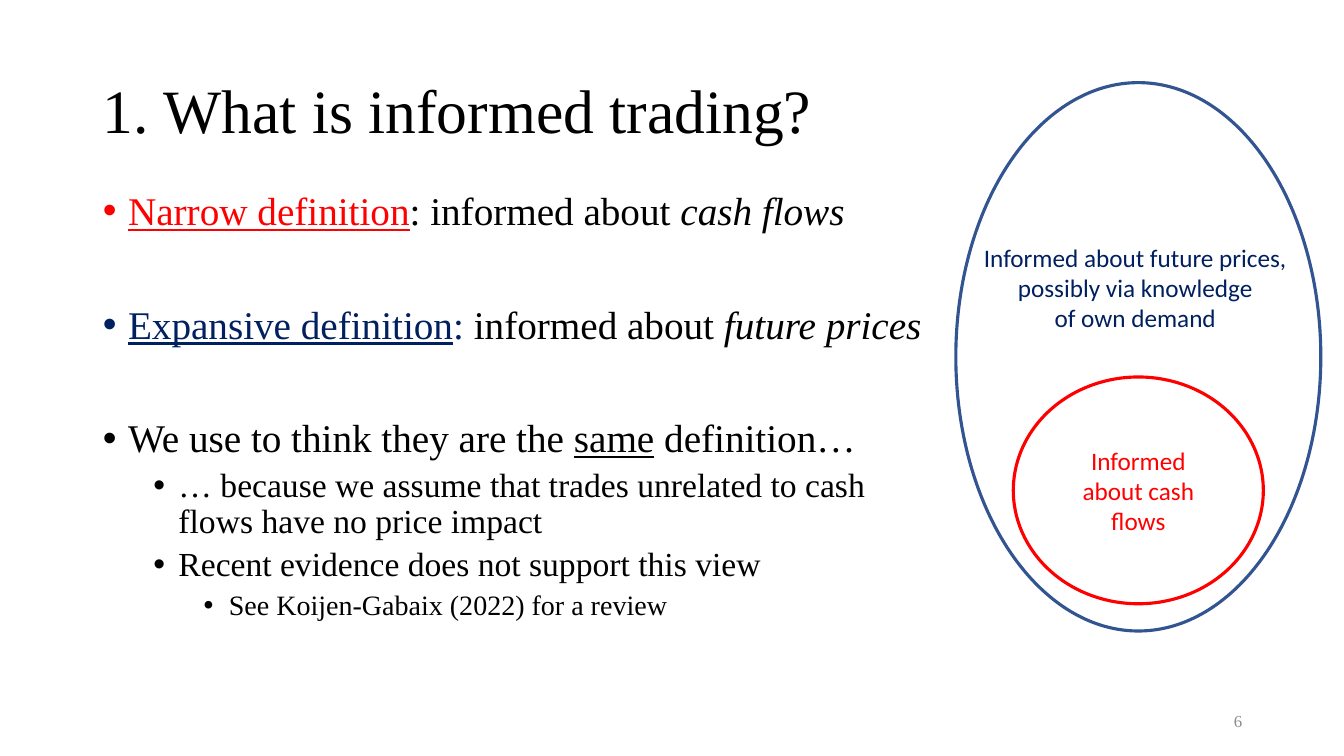
from lxml import etree
from pptx import Presentation
from pptx.dml.color import RGBColor
from pptx.enum.shapes import MSO_SHAPE
from pptx.enum.text import MSO_ANCHOR, MSO_AUTO_SIZE, PP_ALIGN
from pptx.oxml.ns import qn
from pptx.util import Inches, Pt

OVAL = MSO_SHAPE.OVAL
MIDDLE, TOP = MSO_ANCHOR.MIDDLE, MSO_ANCHOR.TOP
NO_AUTOFIT = MSO_AUTO_SIZE.NONE
LEFT, CENTER, RIGHT = PP_ALIGN.LEFT, PP_ALIGN.CENTER, PP_ALIGN.RIGHT

SERIF, SANS = "Times New Roman", "Calibri"
BLACK, RED, NAVY, BLUE, GRAY = "000000", "FF0000", "002060", "325491", "8C8C8C"

LEVEL_SIZES = (28, 24, 20)
SECTION_GAP = 51
DEFINITIONS = [
    (0, 10, [("Narrow definition", {"color": RED, "underline": True}),
             (": informed about ", {}),
             ("cash flows", {"italic": True})]),
    (0, SECTION_GAP, [("Expansive definition", {"color": NAVY, "underline": True}),
                      (": ", {"color": NAVY}),
                      ("informed about ", {}),
                      ("future prices", {"italic": True})]),
    (0, SECTION_GAP, [("We use to think they are the ", {}),
                      ("same", {"underline": True}),
                      (" definition…", {})]),
    (1, 5, [("… because we assume that trades unrelated to cash flows "
             "have no price impact", {})]),
    (1, 5, [("Recent evidence does not support this view", {})]),
    (2, 5, [("See Koijen-Gabaix (2022) for a review", {})]),
]
PRICE_LABEL = ["Informed about future prices,", "possibly via knowledge", "of own demand"]


def rgb(value):
    return RGBColor.from_string(value)


def place(shape, box):
    for name, length in zip(("left", "top", "width", "height"), box):
        setattr(shape, name, Inches(length))


def add_run(paragraph, text, size, font_name, color=BLACK, **formats):
    run = paragraph.add_run()
    run.text = text
    for name, value in {"size": Pt(size), "name": font_name, **formats}.items():
        setattr(run.font, name, value)
    run.font.color.rgb = rgb(color)


def set_frame(text_frame, anchor, wrap=True):
    formats = {"auto_size": NO_AUTOFIT, "word_wrap": wrap, "vertical_anchor": anchor}
    for name, value in formats.items():
        setattr(text_frame, name, value)


def set_bullet(paragraph, level):
    properties = paragraph._p.get_or_add_pPr()
    properties.set("marL", str(Inches(0.25 + 0.5 * level)))
    properties.set("indent", str(Inches(-0.25)))
    font = etree.SubElement(properties, qn("a:buFont"))
    font.set("typeface", "Arial")
    bullet = etree.SubElement(properties, qn("a:buChar"))
    bullet.set("char", "•")


def add_title(slide, box):
    title = slide.shapes.title
    place(title, box)
    set_frame(title.text_frame, MIDDLE)
    paragraph = title.text_frame.paragraphs[0]
    paragraph.alignment = LEFT
    paragraph.line_spacing = 0.9
    add_run(paragraph, "1. What is informed trading?", 44, SERIF)


def add_definitions(slide, box):
    body = slide.placeholders[1]
    place(body, box)
    text_frame = body.text_frame
    set_frame(text_frame, TOP)
    for index, (level, space_before, runs) in enumerate(DEFINITIONS):
        paragraph = text_frame.add_paragraph() if index else text_frame.paragraphs[0]
        formats = {"level": level, "line_spacing": 0.9,
                   "space_before": Pt(space_before), "space_after": Pt(0)}
        for name, value in formats.items():
            setattr(paragraph, name, value)
        set_bullet(paragraph, level)
        for text, run_formats in runs:
            add_run(paragraph, text, LEVEL_SIZES[level], SERIF, **run_formats)


def add_label(slide, box, lines, alignment, anchor, size, font_name, color, wrap=True):
    label = slide.shapes.add_textbox(*map(Inches, box))
    text_frame = label.text_frame
    set_frame(text_frame, anchor, wrap)
    for index, line in enumerate(lines):
        paragraph = text_frame.add_paragraph() if index else text_frame.paragraphs[0]
        paragraph.alignment = alignment
        add_run(paragraph, line, size, font_name, color)


def add_ellipse(slide, box, color):
    ellipse = slide.shapes.add_shape(OVAL, *map(Inches, box))
    ellipse.shadow.inherit = False
    ellipse.fill.background()
    ellipse.line.color.rgb = rgb(color)
    ellipse.line.width = Pt(2.25)
    return ellipse


def add_nested_sets(slide, box):
    left, top, width, height = box
    add_ellipse(slide, box, BLUE)
    cash_flows = add_ellipse(slide, (left + 0.57, top + 2.92, 2.48, 2.25), RED)
    set_frame(cash_flows.text_frame, MIDDLE)
    paragraph = cash_flows.text_frame.paragraphs[0]
    paragraph.alignment = CENTER
    add_run(paragraph, "Informed about cash flows", 18, SANS, RED)
    add_label(slide, (left + 0.13, top + 1.53, 3.3, 1.01), PRICE_LABEL,
              CENTER, TOP, 18, SANS, NAVY, wrap=False)


def main():
    presentation = Presentation()
    presentation.slide_width = Inches(13.33)
    presentation.slide_height = Inches(7.5)
    slide = presentation.slides.add_slide(presentation.slide_layouts[1])
    add_title(slide, (0.92, 0.4, 11.5, 1.45))
    add_definitions(slide, (0.92, 1.85, 8.5, 4.91))
    add_label(slide, (9.42, 6.95, 3, 0.4), ["6"], RIGHT, MIDDLE, 12, SERIF, GRAY)
    add_nested_sets(slide, (9.48, 0.82, 3.62, 5.44))
    presentation.save("out.pptx")


if __name__ == "__main__":
    main()
